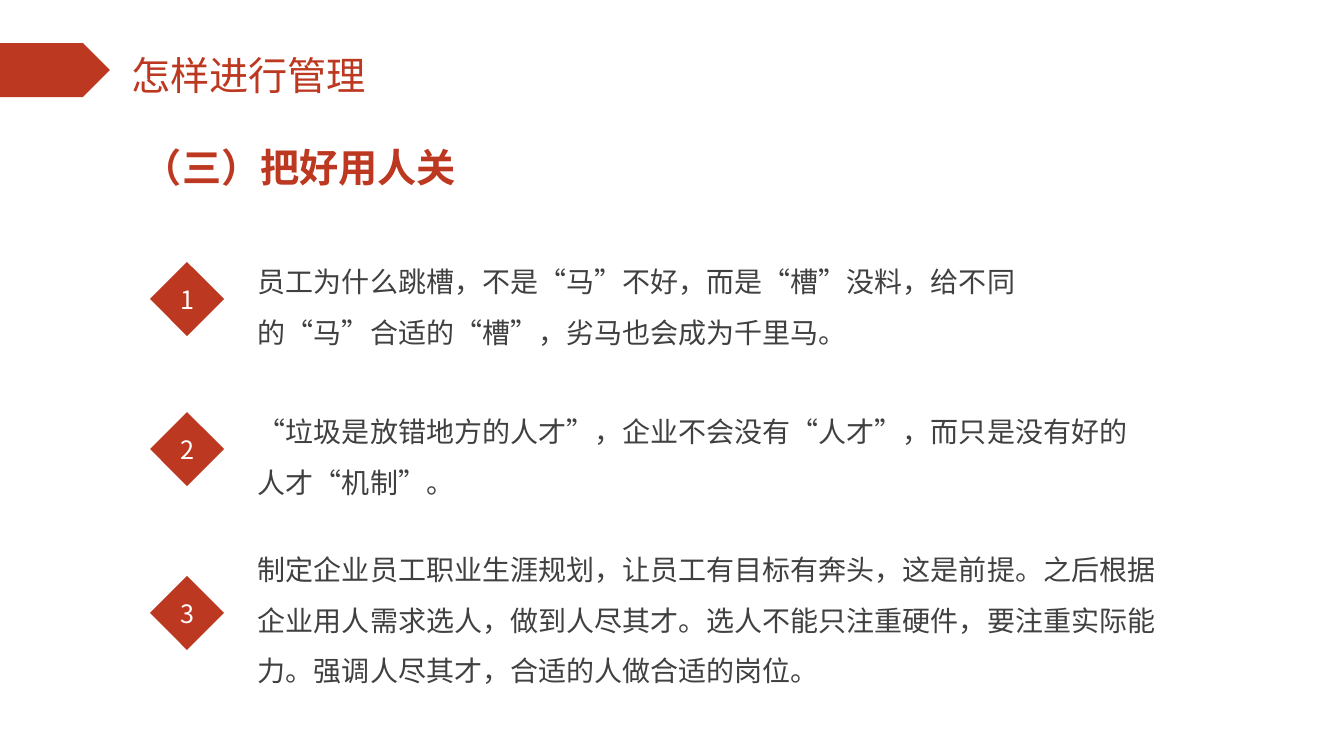
from lxml.etree import SubElement
from pptx import Presentation
from pptx.dml.color import RGBColor
from pptx.enum.lang import MSO_LANGUAGE_ID as Lang
from pptx.enum.shapes import MSO_SHAPE as Shape
from pptx.enum.text import MSO_ANCHOR as Anchor, MSO_AUTO_SIZE as AutoSize, PP_ALIGN as Align
from pptx.oxml.ns import qn
from pptx.util import Emu, Pt

HEADING = "怎样进行管理"
SECTION = "（三）把好用人关"
# diamond top, text top, text width, text height, wording
POINTS = [
    (262, 243, 908, 106,
     "员工为什么跳槽，不是“马”不好，而是“槽”没料，给不同的“马”合适的“槽”，劣马也会成为千里马。"),
    (412, 393, 908, 106,
     "“垃圾是放错地方的人才”，企业不会没有“人才”，而只是没有好的人才“机制”。"),
    (576, 531, 936, 162,
     "制定企业员工职业生涯规划，让员工有目标有奔头，这是前提。之后根据企业用人需求选人，"
     "做到人尽其才。选人不能只注重硬件，要注重实际能力。强调人尽其才，合适的人做合适的岗位。"),
]

FONT = "Noto Sans CJK SC"
RED, GREY, WHITE = "BD3820", "404040", "FFFFFF"
PX_PER_INCH = 100.8
DIAMOND_LEFT, DIAMOND_SIZE, TEXT_LEFT = 150, 74, 248


def px(length):
    return Emu(round(length * 914400 / PX_PER_INCH))


def color(hex_value):
    return RGBColor.from_string(hex_value)


def write(shape, text, size, hex_value, align=Align.LEFT, anchor=Anchor.TOP,
          bold=False, spacing=1.0):
    """Fill a shape with one paragraph, set in FONT for Latin and Chinese."""
    frame = shape.text_frame
    frame.word_wrap = True
    frame.auto_size = AutoSize.NONE
    frame.vertical_anchor = anchor
    paragraph = frame.paragraphs[0]
    paragraph.text = text
    paragraph.alignment = align
    paragraph.line_spacing = spacing
    font = paragraph.font
    font.name, font.size, font.bold = FONT, Pt(size), bold
    font.color.rgb = color(hex_value)
    font.language_id = Lang.SIMPLIFIED_CHINESE
    defaults = paragraph._p.pPr.find(qn("a:defRPr"))
    SubElement(defaults, qn("a:ea")).set("typeface", FONT)


def add_red_shape(slide, kind, *box):
    shape = slide.shapes.add_shape(kind, *map(px, box))
    shape.shadow.inherit = False
    shape.fill.solid()
    shape.fill.fore_color.rgb = color(RED)
    shape.line.fill.background()
    return shape


def add_text(slide, box, *args, **style):
    write(slide.shapes.add_textbox(*map(px, box)), *args, **style)


def main():
    deck = Presentation()
    deck.slide_width, deck.slide_height = px(1344), px(756)
    slide = deck.slides.add_slide(deck.slide_layouts[5])

    add_red_shape(slide, Shape.PENTAGON, 0, 43, 110, 54)
    heading = slide.shapes.title
    heading.left, heading.top, heading.width, heading.height = map(px, (121, 46, 309, 57))
    write(heading, HEADING, 28, RED, align=Align.JUSTIFY)
    add_text(slide, (133, 131, 465, 71), SECTION, 28, RED, anchor=Anchor.MIDDLE, bold=True)

    for number, (diamond_top, top, width, height, wording) in enumerate(POINTS, 1):
        diamond = add_red_shape(slide, Shape.DIAMOND, DIAMOND_LEFT, diamond_top,
                                DIAMOND_SIZE, DIAMOND_SIZE)
        write(diamond, str(number), 18, WHITE, align=Align.CENTER, anchor=Anchor.MIDDLE)
        add_text(slide, (TEXT_LEFT, top, width, height), wording, 20, GREY, spacing=1.5)

    deck.save("out.pptx")


if __name__ == "__main__":
    main()
